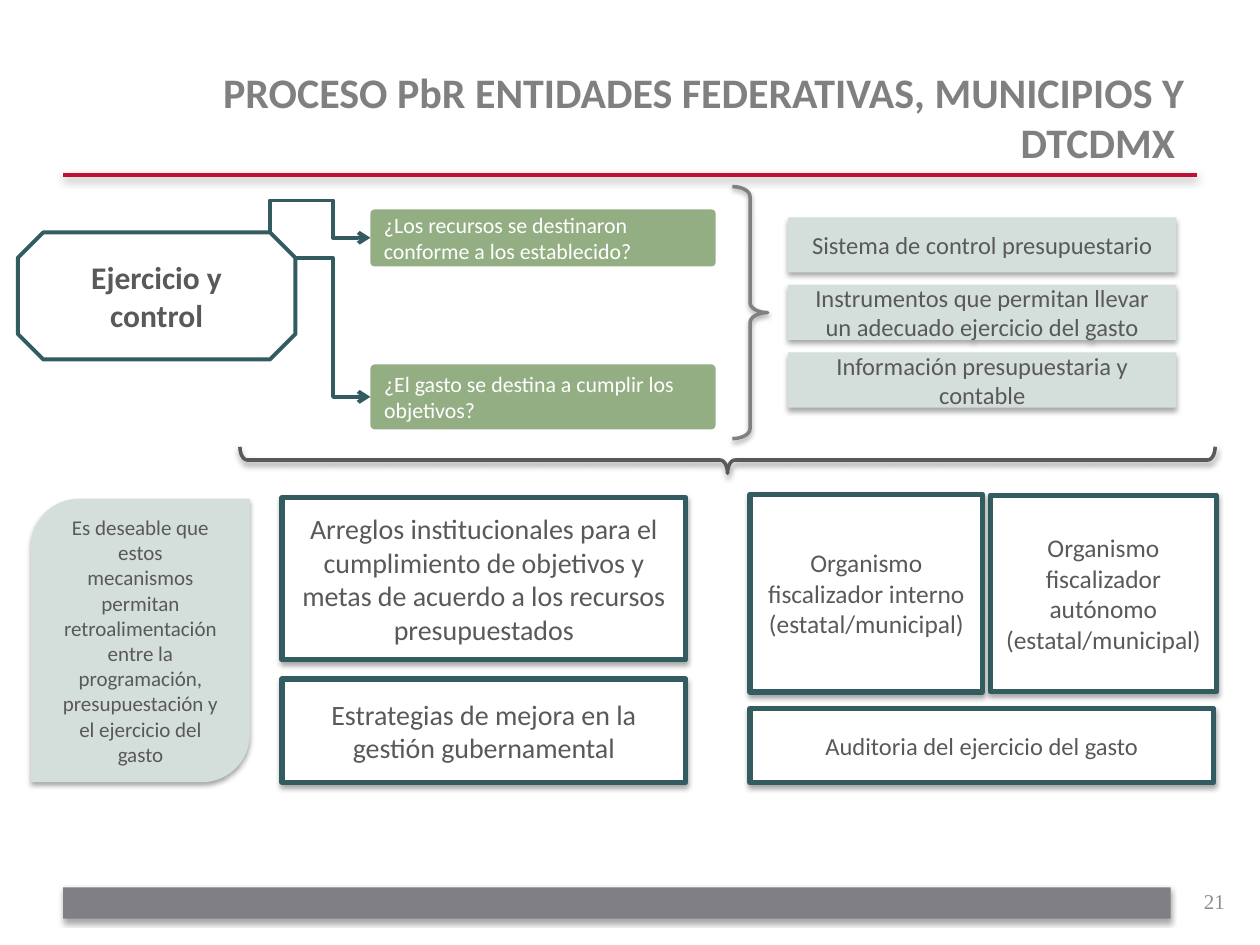
from lxml import etree
from pptx import Presentation
from pptx import util as u
from pptx.dml.color import RGBColor
from pptx.enum import shapes, text
from pptx.oxml.ns import qn

COLORS = {
    "white": "FFFFFF", "text": "595959", "title": "808080", "number": "8C8C8C",
    "teal": "325C5F", "green": "94AE84", "mist": "D4DEDB",
    "red": "BE0F34", "bar": "807F83", "shadow": "000000",
}
SHAPE = shapes.MSO_SHAPE
ALIGN = text.PP_ALIGN


class SlideBuilder:
    font = "Calibri"

    def __init__(self, page):
        self.page = page

    def color(self, name):
        return RGBColor.from_string(COLORS[name])

    def place(self, item, frame):
        item.left, item.top, item.width, item.height = [u.Pt(v) for v in frame]

    def add_text(self, box, paragraphs, size, color, align, bold=False, font=None):
        frame = box.text_frame
        frame.word_wrap = True
        frame.auto_size = text.MSO_AUTO_SIZE.NONE
        frame.vertical_anchor = text.MSO_ANCHOR.MIDDLE
        for index, words in enumerate(paragraphs):
            para = frame.add_paragraph() if index else frame.paragraphs[0]
            para.alignment = align
            span = para.add_run()
            span.text = words
            span.font.size = u.Pt(size)
            span.font.name = font or self.font
            span.font.bold = bold
            span.font.color.rgb = self.color(color)

    def shade(self, effects, alpha=35, blur=3.1, distance=1.8):
        shadow = etree.SubElement(
            effects, qn("a:outerShdw"), blurRad=str(u.Pt(blur)),
            dist=str(u.Pt(distance)), dir="5400000", rotWithShape="0")
        tint = etree.SubElement(shadow, qn("a:srgbClr"), val=COLORS["shadow"])
        etree.SubElement(tint, qn("a:alpha"), val=str(alpha * 1000))

    def title(self, words, frame):
        box = self.page.shapes.title
        self.place(box, frame)
        self.add_text(box, [words], 24, "title", ALIGN.RIGHT, bold=True)

    def label(self, words, frame):
        box = self.page.shapes.add_textbox(*[u.Pt(v) for v in frame])
        self.add_text(box, [words], 12, "number", ALIGN.RIGHT, font="Times New Roman")

    def shape(self, kind, frame, fill=None, line=None, weight=3, adjust=(), shadow=True):
        box = self.page.shapes.add_shape(kind, *[u.Pt(v) for v in frame])
        for index, value in enumerate(adjust):
            box.adjustments[index] = value
        if fill:
            box.fill.solid()
            box.fill.fore_color.rgb = self.color(fill)
        else:
            box.fill.background()
        if line:
            box.line.color.rgb = self.color(line)
            box.line.width = u.Pt(weight)
        else:
            box.line.fill.background()
        box.shadow.inherit = False
        if shadow:
            self.shade(box._element.spPr.find(qn("a:effectLst")))
        return box

    def card(self, paragraphs, frame, size, fill="white", line="teal"):
        box = self.shape(SHAPE.RECTANGLE, frame, fill, line)
        self.add_text(box, paragraphs, size, "text", ALIGN.CENTER)

    def question(self, words, frame):
        box = self.shape(SHAPE.ROUNDED_RECTANGLE, frame, "green", adjust=[0.07], shadow=False)
        self.add_text(box, [words], 12.5, "white", ALIGN.LEFT)

    def brace(self, frame, color, rotation):
        box = self.shape(SHAPE.LEFT_BRACE, frame, line=color, weight=2, adjust=[0.28, 0.5])
        box.rotation = rotation

    def connector(self, kind, points, color, weight):
        line = self.page.shapes.add_connector(kind, *[u.Pt(v) for v in points])
        line.line.color.rgb = self.color(color)
        line.line.width = u.Pt(weight)
        effects = etree.SubElement(line._element.spPr, qn("a:effectLst"))
        return line, effects

    def rule(self, points):
        line, effects = self.connector(shapes.MSO_CONNECTOR.STRAIGHT, points, "red", 2)
        self.shade(effects, 38, 5, 1.6)

    def elbow(self, points, preset="bentConnector3", adjust=(0.5,), rotation=0):
        line, effects = self.connector(shapes.MSO_CONNECTOR.ELBOW, points, "teal", 2.25)
        outline = line._element.spPr.find(qn("a:ln"))
        etree.SubElement(outline, qn("a:tailEnd"), type="arrow")
        line._element.spPr.find(qn("a:xfrm")).set("rot", str(rotation * 60000))
        geometry = line._element.spPr.find(qn("a:prstGeom"))
        geometry.set("prst", preset)
        guides = geometry.find(qn("a:avLst"))
        for index, value in enumerate(adjust, 1):
            etree.SubElement(guides, qn("a:gd"), name=f"adj{index}",
                             fmla=f"val {round(value * 100000)}")


def main():
    deck = Presentation()
    deck.slide_width, deck.slide_height = u.Pt(720), u.Pt(540)
    slide = SlideBuilder(deck.slides.add_slide(deck.slide_layouts[5]))

    slide.shape(SHAPE.RECTANGLE, (36, 507, 633, 18), "bar")
    slide.rule((36, 100, 684, 100))
    slide.title("PROCESO PbR ENTIDADES FEDERATIVAS, MUNICIPIOS Y DTCDMX ", (36, 34, 648, 65.5))
    slide.label("21", (539.5, 500.5, 167.5, 29))

    stage = slide.shape(SHAPE.OCTAGON, (10.2, 132.8, 158.6, 72.6), line="teal",
                        weight=2.25, adjust=[0.2], shadow=False)
    slide.add_text(stage, ["Ejercicio y control"], 18, "text", ALIGN.CENTER, bold=True)
    slide.elbow((169, 147.6, 211.7, 226.8))
    slide.elbow((184.5, 105.48, 181.26, 163.08), "bentConnector4", (-5.59, 0.63), 270)

    slide.question("¿Los recursos se destinaron conforme a los establecido?",
                   (211.7, 119.7, 197.3, 32.5))
    slide.question("¿El gasto se destina a cumplir los objetivos?",
                   (211.7, 208.2, 197.3, 37.2))

    slide.brace((418.5, 106.6, 20.2, 144), "title", 180)
    slide.brace((408.2, -15.8, 15.1, 557.3), "text", 270)

    tools = ["Sistema de control presupuestario",
             "Instrumentos que permitan llevar un adecuado ejercicio del gasto",
             "Información presupuestaria y contable"]
    for index, words in enumerate(tools):
        slide.card([words], (450.4, 124.2 + 38.6 * index, 221.8, 31.5), 14, "mist", None)

    cards = [
        ("Organismo fiscalizador autónomo (estatal/municipal)", (566, 283, 129, 112.3), 14.5),
        ("Organismo fiscalizador interno (estatal/municipal)", (428.6, 282.5, 132.8, 113), 14.5),
        ("Auditoria del ejercicio del gasto", (428.6, 405, 265, 42.3), 14),
        ("Arreglos institucionales para el cumplimiento de objetivos y metas "
         "de acuerdo a los recursos presupuestados", (161.2, 284.4, 230.6, 92.7), 16),
        ("Estrategias de mejora en la gestión gubernamental", (161.2, 388, 230.6, 59.2), 16),
    ]
    for words, frame, size in cards:
        slide.card([words], frame, size)

    note = slide.shape(SHAPE.ROUND_2_DIAG_RECTANGLE, (17.8, 285, 125, 162), "mist",
                       adjust=[0.22, 0])
    slide.add_text(note, ["Es deseable que estos",
                          "mecanismos permitan retroalimentación entre la programación, "
                          "presupuestación y el ejercicio del gasto"],
                   12, "text", ALIGN.CENTER)

    deck.save("out.pptx")


if __name__ == "__main__":
    main()
